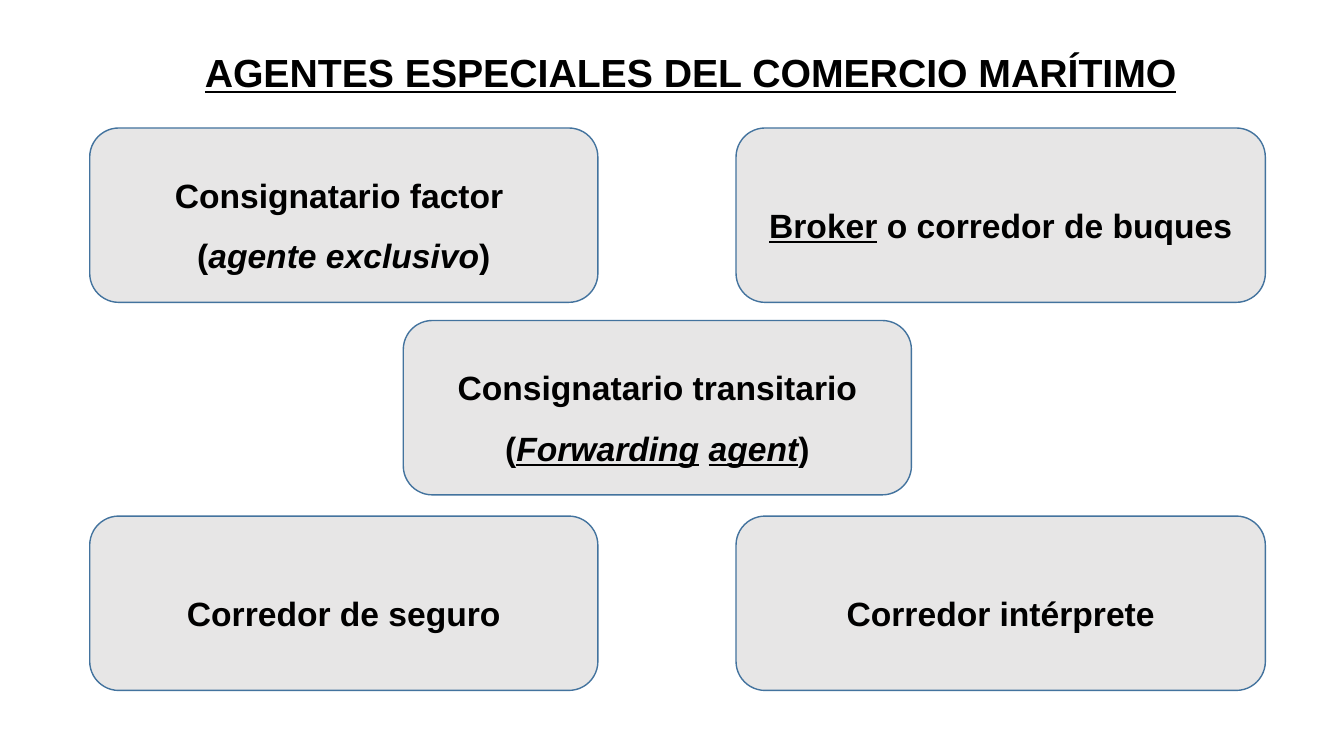
from dataclasses import dataclass

from pptx import Presentation
from pptx.dml.color import RGBColor
from pptx.enum.shapes import MSO_SHAPE
from pptx.enum.text import MSO_ANCHOR, MSO_AUTO_SIZE, PP_ALIGN
from pptx.util import Inches, Pt

ROUNDED = MSO_SHAPE.ROUNDED_RECTANGLE
MIDDLE = MSO_ANCHOR.MIDDLE
FIT_SHAPE = MSO_AUTO_SIZE.SHAPE_TO_FIT_TEXT
CENTER = PP_ALIGN.CENTER


@dataclass(frozen=True)
class Theme:
    font: str = "Arial"
    ink: RGBColor = RGBColor(0, 0, 0)
    card_fill: RGBColor = RGBColor(0xE7, 0xE6, 0xE6)
    card_line: RGBColor = RGBColor(0x43, 0x73, 0x9E)
    title_size: int = 28
    card_size: int = 24
    line_width: int = 1
    card_spacing: float = 1.5


THEME = Theme()

# Grid in inches: (left, width) of each column, top of each row
COLUMNS = {"left": (0.89, 5.04), "center": (4, 5.04), "right": (7.3, 5.25)}
ROWS = {"top": 1.27, "middle": 3.18, "bottom": 5.12}
CARD_HEIGHT = 1.73
TITLE_BOX = (1.75, 0.43, 10.2, 0.57)

TITLE = "AGENTES ESPECIALES DEL COMERCIO MARÍTIMO"

# Each agent: column, row, lines; each line is a list of (text, style),
# where style holds "i" for italic and "u" for underline
AGENTS = [
    ("left", "top", [
        [("Consignatario factor ", "")],
        [("(", ""), ("agente exclusivo", "i"), (")", "")],
    ]),
    ("right", "top", [[("Broker", "u"), (" o corredor de buques", "")]]),
    ("center", "middle", [
        [("Consignatario transitario", "")],
        [("(", ""), ("Forwarding", "iu"), (" ", "i"), ("agent", "iu"), (")", "")],
    ]),
    ("left", "bottom", [[("Corredor de seguro", "")]]),
    ("right", "bottom", [[("Corredor intérprete", "")]]),
]


def write_line(paragraph, pieces, size):
    paragraph.alignment = CENTER
    for text, style in pieces:
        run = paragraph.add_run()
        run.text = text
        font = run.font
        font.name = THEME.font
        font.size = Pt(size)
        font.color.rgb = THEME.ink
        font.bold = True
        font.italic = "i" in style
        font.underline = "u" in style


def add_title(slide, box):
    frame = slide.shapes.add_textbox(*map(Inches, box)).text_frame
    frame.word_wrap = False
    frame.auto_size = FIT_SHAPE
    write_line(frame.paragraphs[0], [(TITLE, "u")], THEME.title_size)


def add_agent_card(slide, box, lines):
    card = slide.shapes.add_shape(ROUNDED, *map(Inches, box))
    card.shadow.inherit = False
    card.fill.solid()
    card.fill.fore_color.rgb = THEME.card_fill
    card.line.color.rgb = THEME.card_line
    card.line.width = Pt(THEME.line_width)

    frame = card.text_frame
    frame.word_wrap = True
    frame.vertical_anchor = MIDDLE
    for index, pieces in enumerate(lines):
        paragraph = frame.add_paragraph() if index else frame.paragraphs[0]
        paragraph.line_spacing = THEME.card_spacing
        write_line(paragraph, pieces, THEME.card_size)


def build_agents_slide(deck):
    slide = deck.slides.add_slide(deck.slide_layouts[6])
    add_title(slide, TITLE_BOX)
    for column, row, lines in AGENTS:
        left, width = COLUMNS[column]
        add_agent_card(slide, (left, ROWS[row], width, CARD_HEIGHT), lines)


def main():
    deck = Presentation()
    deck.slide_width = Inches(13.33)
    deck.slide_height = Inches(7.5)
    build_agents_slide(deck)
    deck.save("out.pptx")


if __name__ == "__main__":
    main()
